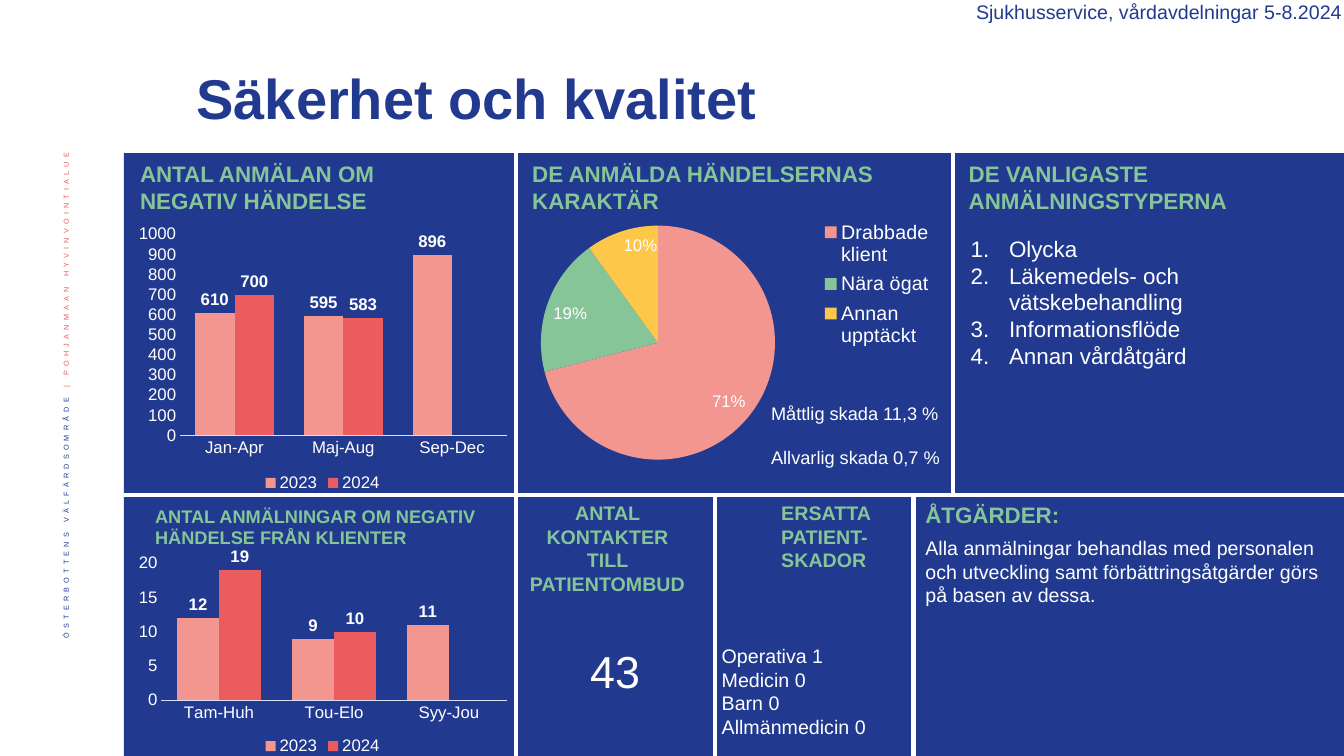
from lxml import etree
from pptx import Presentation
from pptx.chart.data import CategoryChartData
from pptx.dml.color import RGBColor
from pptx.enum.chart import XL_CHART_TYPE, XL_LABEL_POSITION, XL_LEGEND_POSITION, XL_TICK_MARK
from pptx.enum.shapes import MSO_CONNECTOR, MSO_SHAPE
from pptx.enum.text import MSO_ANCHOR, PP_ALIGN
from pptx.oxml.ns import qn
from pptx.util import Pt

PX = 9144  # EMU, 100 px to the inch
FONT = "Arial"

NAVY = RGBColor(0x21, 0x3A, 0x8F)
WHITE = RGBColor(0xFF, 0xFF, 0xFF)
GREEN = RGBColor(0x85, 0xC5, 0x98)
RED = RGBColor(0xEB, 0x5C, 0x5F)
PINK = RGBColor(0xF3, 0x96, 0x90)
YELLOW = RGBColor(0xFD, 0xC8, 0x4A)
AXIS_BLUE = RGBColor(0xD6, 0xDD, 0xF6)

LEFT, CENTER, RIGHT = PP_ALIGN.LEFT, PP_ALIGN.CENTER, PP_ALIGN.RIGHT
MIDDLE, TOP = MSO_ANCHOR.MIDDLE, MSO_ANCHOR.TOP
COLUMNS, PIE = XL_CHART_TYPE.COLUMN_CLUSTERED, XL_CHART_TYPE.PIE
OUTSIDE_END, INSIDE_END = XL_LABEL_POSITION.OUTSIDE_END, XL_LABEL_POSITION.INSIDE_END
LEGEND_BOTTOM, LEGEND_RIGHT = XL_LEGEND_POSITION.BOTTOM, XL_LEGEND_POSITION.RIGHT
NO_TICKS = XL_TICK_MARK.NONE

WIDTH, HEIGHT = 1333, 750
PANEL_LEFT, PANEL_TOP, ROW_BREAK = 123, 152, 491


def emu(*lengths):
    return [length * PX for length in lengths]


def set_font(font, size, color, bold=False):
    font.name = FONT
    font.size = Pt(size)
    font.color.rgb = color
    font.bold = bold


def add_rectangle(slide, box, color):
    shape = slide.shapes.add_shape(MSO_SHAPE.RECTANGLE, *emu(*box))
    shape.shadow.inherit = False
    shape.fill.solid()
    shape.fill.fore_color.rgb = color
    shape.line.fill.background()


def add_divider(slide, *ends):
    connector = slide.shapes.add_connector(MSO_CONNECTOR.STRAIGHT, *emu(*ends))
    connector.line.color.rgb = WHITE
    connector.line.width = Pt(3)
    etree.SubElement(connector.element.spPr, qn("a:effectLst"))


def number_paragraph(paragraph, indent):
    properties = paragraph._p.get_or_add_pPr()
    properties.set("marL", str(indent * PX))
    properties.set("indent", str(-indent * PX))
    etree.SubElement(properties, qn("a:buFont")).set("typeface", FONT)
    etree.SubElement(properties, qn("a:buAutoNum")).set("type", "arabicPeriod")


def add_text(slide, box, lines, size, color, bold=False, align=LEFT,
             anchor=TOP, gap=0, numbered=False):
    """Add a text box with one paragraph per line, gap points apart."""
    frame = slide.shapes.add_textbox(*emu(*box)).text_frame
    frame.word_wrap = True
    frame.vertical_anchor = anchor
    for index, line in enumerate(lines):
        paragraph = frame.add_paragraph() if index else frame.paragraphs[0]
        paragraph.text = line
        paragraph.alignment = align
        if index and gap:
            paragraph.space_before = Pt(gap)
        if numbered:
            number_paragraph(paragraph, 38)
        set_font(paragraph.font, size, color, bold)


def add_heading(slide, box, text, size=16, align=LEFT):
    add_text(slide, box, [text], size, GREEN, bold=True, align=align)


def add_side_text(slide, box, parts):
    """Add raised, spaced text that reads upwards."""
    frame = slide.shapes.add_textbox(*emu(*box)).text_frame
    frame.word_wrap = True
    frame.vertical_anchor = MIDDLE
    frame._txBody.bodyPr.set("vert", "vert270")
    paragraph = frame.paragraphs[0]
    paragraph.alignment = RIGHT
    paragraph.line_spacing = 0.9
    for text, color in parts:
        run = paragraph.add_run()
        run.text = text
        set_font(run.font, 9, color)
        run.font._element.set("baseline", "30000")
        run.font._element.set("spc", "300")


def add_chart(slide, kind, box, categories, series, legend_position, legend_size):
    data = CategoryChartData()
    data.categories = categories
    for name, values in series:
        data.add_series(name, values)
    chart = slide.shapes.add_chart(kind, *emu(*box), data).chart
    set_font(chart.font, 10, NAVY)
    chart.has_title = False
    chart.has_legend = True
    chart.legend.position = legend_position
    chart.legend.include_in_layout = False
    set_font(chart.legend.font, legend_size, WHITE)
    return chart


def add_year_chart(slide, box, categories, values_2023, values_2024):
    chart = add_chart(slide, COLUMNS, box, categories,
                      [("2023", values_2023), ("2024", values_2024)], LEGEND_BOTTOM, 12)
    for axis in (chart.category_axis, chart.value_axis):
        axis.major_tick_mark = axis.minor_tick_mark = NO_TICKS
        axis.has_major_gridlines = False
        set_font(axis.tick_labels.font, 12, WHITE)
    chart.category_axis.format.line.color.rgb = AXIS_BLUE
    chart.category_axis.format.line.width = Pt(0.75)
    chart.value_axis.format.line.fill.background()
    plot = chart.plots[0]
    plot.gap_width = 75
    plot.overlap = 0
    plot.vary_by_categories = False
    for series, color in zip(plot.series, (PINK, RED)):
        series.format.fill.solid()
        series.format.fill.fore_color.rgb = color
        labels = series.data_labels
        labels.show_value = True
        labels.position = OUTSIDE_END
        set_font(labels.font, 12, WHITE, bold=True)


def make_layout(x, y, w, h, inner=False):
    """Build a manual chart layout in fractions of the chart area."""
    layout = etree.Element(qn("c:layout"))
    manual = etree.SubElement(layout, qn("c:manualLayout"))
    settings = [("layoutTarget", "inner")] if inner else []
    settings += [("xMode", "edge"), ("yMode", "edge"), ("x", x), ("y", y), ("w", w), ("h", h)]
    for tag, value in settings:
        etree.SubElement(manual, qn(f"c:{tag}")).set("val", str(value))
    return layout


def add_share_pie(slide, box, categories, shares, colors):
    chart = add_chart(slide, PIE, box, categories, [("Series 1", shares)], LEGEND_RIGHT, 14)
    plot = chart.plots[0]
    plot.vary_by_categories = True
    for index, color in enumerate(colors):
        fill = plot.series[0].points[index].format.fill
        fill.solid()
        fill.fore_color.rgb = color
    plot.has_data_labels = True
    labels = plot.data_labels
    labels.show_percentage = True
    labels.show_value = False
    labels.number_format = "0%"
    labels.number_format_is_linked = False
    labels.position = INSIDE_END
    set_font(labels.font, 12, WHITE)
    for old_layout in chart.element.xpath(".//c:plotArea/c:layout | .//c:legend/c:layout"):
        old_layout.getparent().remove(old_layout)
    plot_area = chart.element.xpath(".//c:plotArea")[0]
    plot_area.insert(0, make_layout(0.05, 0.08, 0.54, 0.84, inner=True))
    legend_position = chart.element.xpath(".//c:legend/c:legendPos")[0]
    legend_position.addnext(make_layout(0.68, 0.05, 0.29, 0.49))


def main():
    presentation = Presentation()
    presentation.slide_width, presentation.slide_height = emu(WIDTH, HEIGHT)
    slide = presentation.slides.add_slide(presentation.slide_layouts[6])

    add_side_text(slide, (42, 142, 52, 573), [
        ("ÖSTERBOTTENS VÄLFÄRDSOMRÅDE ", NAVY), ("| POHJANMAAN HYVINVOINTIALUE", RED)])
    add_rectangle(slide, (PANEL_LEFT, PANEL_TOP, WIDTH - PANEL_LEFT, HEIGHT - PANEL_TOP), NAVY)
    add_divider(slide, PANEL_LEFT, ROW_BREAK, WIDTH, ROW_BREAK)
    for x in (512, 945):
        add_divider(slide, x, PANEL_TOP, x, ROW_BREAK)
    for x in (512, 709, 906):
        add_divider(slide, x, ROW_BREAK, x, HEIGHT)

    add_text(slide, (629, -5, 712, 34), ["Sjukhusservice, vårdavdelningar 5-8.2024"],
             14, NAVY, align=RIGHT)
    add_text(slide, (185, 47, 998, 99), ["Säkerhet och kvalitet"], 40, NAVY,
             bold=True, anchor=MIDDLE)

    add_heading(slide, (129, 154, 311, 64), "ANTAL ANMÄLAN OM NEGATIV HÄNDELSE")
    add_year_chart(slide, (130, 218, 380, 274), ["Jan-Apr", "Maj-Aug", "Sep-Dec"],
                   [610, 595, 896], [700, 583, None])

    add_heading(slide, (518, 154, 418, 64), "DE ANMÄLDA HÄNDELSERNAS KARAKTÄR")
    add_share_pie(slide, (515, 198, 430, 284),
                  ["Drabbade klient", "Nära ögat", "Annan upptäckt"],
                  [71, 19, 10], [PINK, GREEN, YELLOW])
    add_text(slide, (755, 394, 203, 76), ["Måttlig skada 11,3 %", "Allvarlig skada 0,7 %"],
             13, WHITE, gap=16)

    add_heading(slide, (951, 154, 357, 64), "DE VANLIGASTE ANMÄLNINGSTYPERNA")
    add_text(slide, (953, 228, 380, 175),
             ["Olycka", "Läkemedels- och vätskebehandling", "Informationsflöde",
              "Annan vårdåtgärd"], 16, WHITE, numbered=True)

    add_heading(slide, (144, 496, 381, 54),
                "ANTAL ANMÄLNINGAR OM NEGATIV HÄNDELSE FRÅN KLIENTER", size=13)
    add_year_chart(slide, (130, 544, 380, 209), ["Tam-Huh", "Tou-Elo", "Syy-Jou"],
                   [12, 9, 11], [19, 10, None])

    add_heading(slide, (513, 492, 179, 104), "ANTAL KONTAKTER TILL PATIENTOMBUD",
                size=14, align=CENTER)
    add_text(slide, (512, 634, 197, 64), ["43"], 32, WHITE, align=CENTER)

    add_heading(slide, (765, 492, 129, 81), "ERSATTA PATIENT-SKADOR", size=14)
    add_text(slide, (706, 634, 197, 104),
             ["Operativa 1", "Medicin 0", "Barn 0", "Allmänmedicin 0"], 14, WHITE)

    add_heading(slide, (908, 492, 403, 37), "ÅTGÄRDER:")
    add_text(slide, (908, 527, 425, 128),
             ["Alla anmälningar behandlas med personalen och utveckling samt "
              "förbättringsåtgärder görs på basen av dessa."], 14, WHITE)

    presentation.save("out.pptx")


if __name__ == "__main__":
    main()
